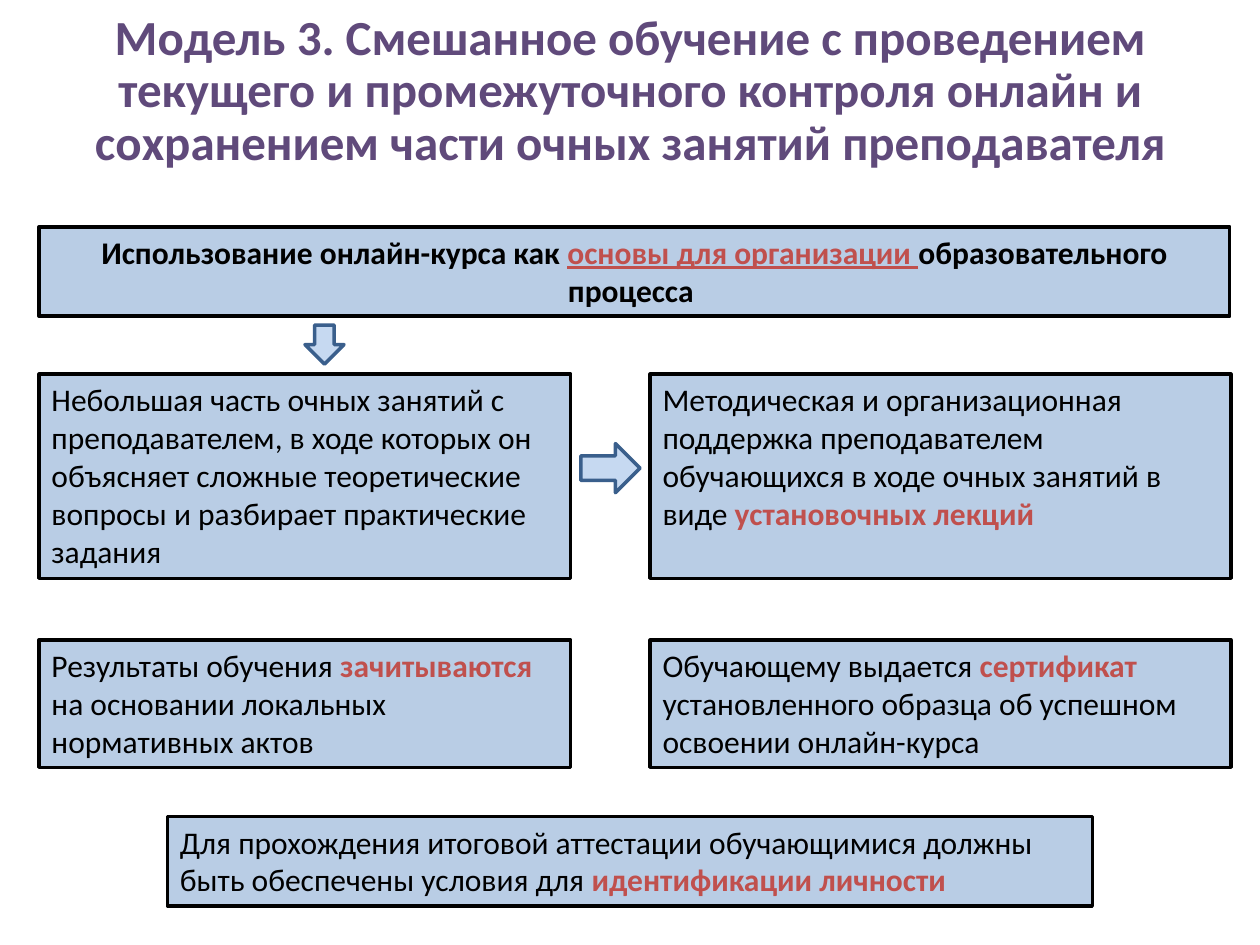
"""Builds a slide on a blended learning model with online assessment."""
from dataclasses import dataclass

from pptx import Presentation
from pptx.dml.color import RGBColor
from pptx.enum.shapes import MSO_SHAPE
from pptx.enum.text import MSO_ANCHOR, PP_ALIGN
from pptx.util import Inches, Pt


@dataclass(frozen=True)
class Theme:
    font: str = "Calibri"
    title_size: int = 28
    title_leading: int = 30
    body_size: int = 18
    line_width: int = 2
    title: str = "604A7B"
    text: str = "000000"
    accent: str = "C0504D"
    box_fill: str = "B9CDE5"
    box_line: str = "000000"
    arrow_fill: str = "C6D9F1"
    arrow_line: str = "3A5F8C"


theme = Theme()


def add_span(para, text, size, color, bold=False, underline=False):
    span = para.add_run()
    span.text = text
    span.font.name = theme.font
    span.font.size = Pt(size)
    span.font.bold = bold
    span.font.underline = underline
    span.font.color.rgb = RGBColor.from_string(color)


def add_figure(kind, place, fill, line):
    shape = page.shapes.add_shape(kind, *(Inches(value) for value in place))
    shape.shadow.inherit = False
    shape.fill.solid()
    shape.fill.fore_color.rgb = RGBColor.from_string(fill)
    shape.line.color.rgb = RGBColor.from_string(line)
    shape.line.width = Pt(theme.line_width)
    return shape


deck = Presentation()
deck.slide_width, deck.slide_height = Inches(10), Inches(7.5)
page = deck.slides.add_slide(deck.slide_layouts[5])

title = page.shapes.title
title.left, title.top = Inches(0), Inches(0.31)
title.width, title.height = Inches(10), Inches(1.25)
title_frame = title.text_frame
title_frame.word_wrap = True
title_frame.vertical_anchor = MSO_ANCHOR.MIDDLE
title_frame.margin_bottom = Inches(0.47)
title_para = title_frame.paragraphs[0]
title_para.alignment = PP_ALIGN.CENTER
title_para.line_spacing = Pt(theme.title_leading)
add_span(
    title_para,
    "Модель 3. Смешанное обучение с проведением текущего и промежуточного "
    "контроля онлайн и сохранением части очных занятий преподавателя",
    theme.title_size, theme.title, bold=True,
)

left, left_width = 0.31, 4.22
right, right_width = 5.16, 4.61
lessons_top, lessons_height = 2.97, 1.62
results_top, results_height = 5.08, 1.01
banner_height = 0.71

course_place = (left, 1.8, 9.45, banner_height)
boxes = [
    (course_place, [
        ("Использование онлайн-курса как ", False),
        ("основы для организации ", True),
        ("образовательного процесса ", False),
    ]),
    ((left, lessons_top, left_width, lessons_height), [
        ("Небольшая часть очных занятий с преподавателем, в ходе которых он "
         "объясняет сложные теоретические вопросы и разбирает практические задания", False),
    ]),
    ((right, lessons_top, right_width, lessons_height), [
        ("Методическая и организационная поддержка преподавателем обучающихся "
         "в ходе очных занятий в виде ", False),
        ("установочных лекций", True),
    ]),
    ((left, results_top, left_width, results_height), [
        ("Результаты обучения ", False),
        ("зачитываются ", True),
        ("на основании локальных нормативных актов", False),
    ]),
    ((right, results_top, right_width, results_height), [
        ("Обучающему выдается ", False),
        ("сертификат ", True),
        ("установленного образца об успешном освоении онлайн-курса", False),
    ]),
    ((1.33, 6.48, 7.34, banner_height), [
        ("Для прохождения итоговой аттестации обучающимися должны быть "
         "обеспечены условия для ", False),
        ("идентификации личности", True),
    ]),
]
for place, spans in boxes:
    is_course = place == course_place
    box = add_figure(MSO_SHAPE.RECTANGLE, place, theme.box_fill, theme.box_line)
    frame = box.text_frame
    frame.word_wrap = True
    frame.vertical_anchor = MSO_ANCHOR.TOP
    para = frame.paragraphs[0]
    para.alignment = PP_ALIGN.CENTER if is_course else PP_ALIGN.LEFT
    for text, accented in spans:
        add_span(
            para, text, theme.body_size,
            theme.accent if accented else theme.text,
            bold=accented or is_course,
            underline=accented and is_course,
        )

arrows = [
    (MSO_SHAPE.DOWN_ARROW, (2.42, 2.58, 0.31, 0.31)),
    (MSO_SHAPE.RIGHT_ARROW, (4.61, 3.52, 0.47, 0.39)),
]
for kind, place in arrows:
    add_figure(kind, place, theme.arrow_fill, theme.arrow_line)

deck.save("out.pptx")
